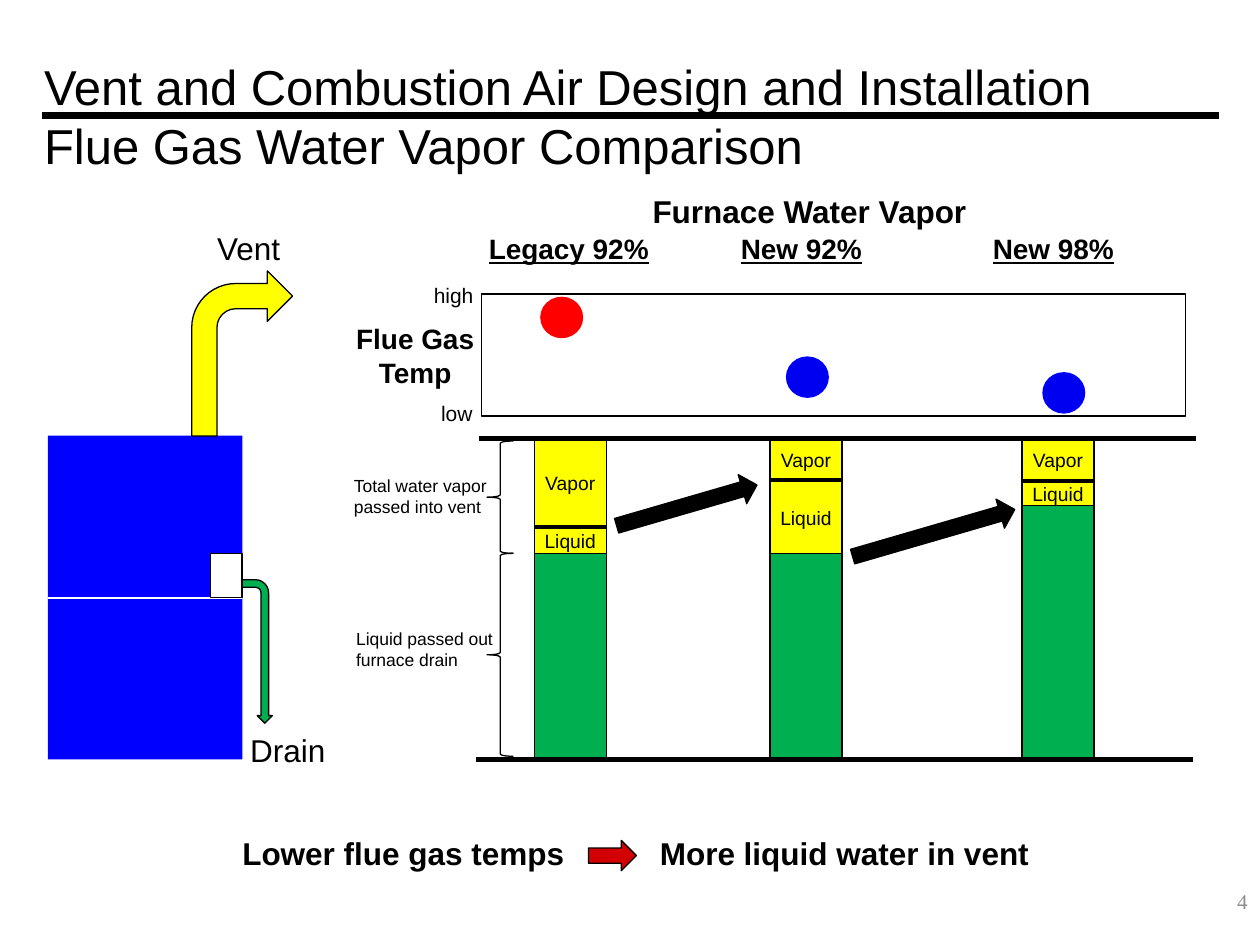
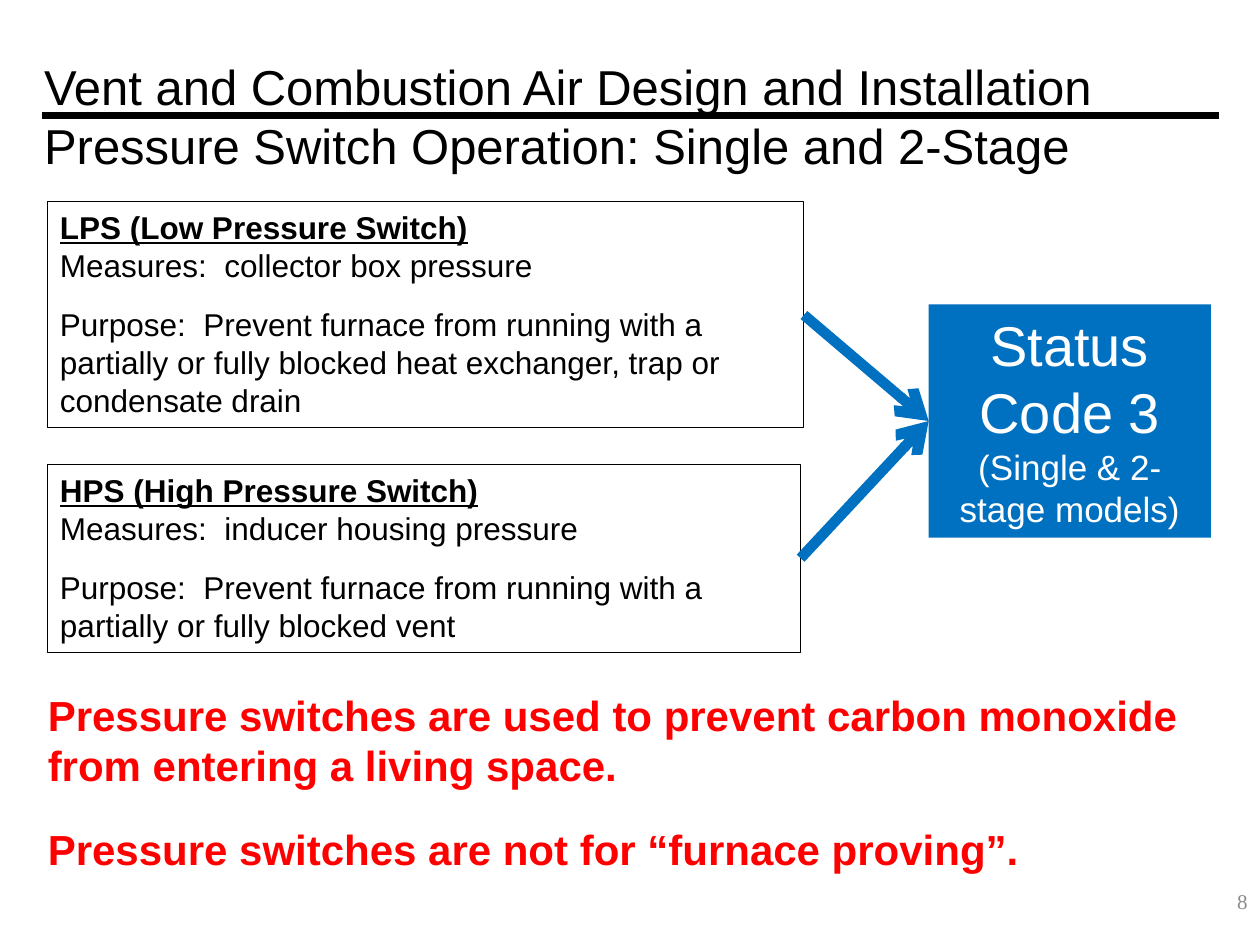
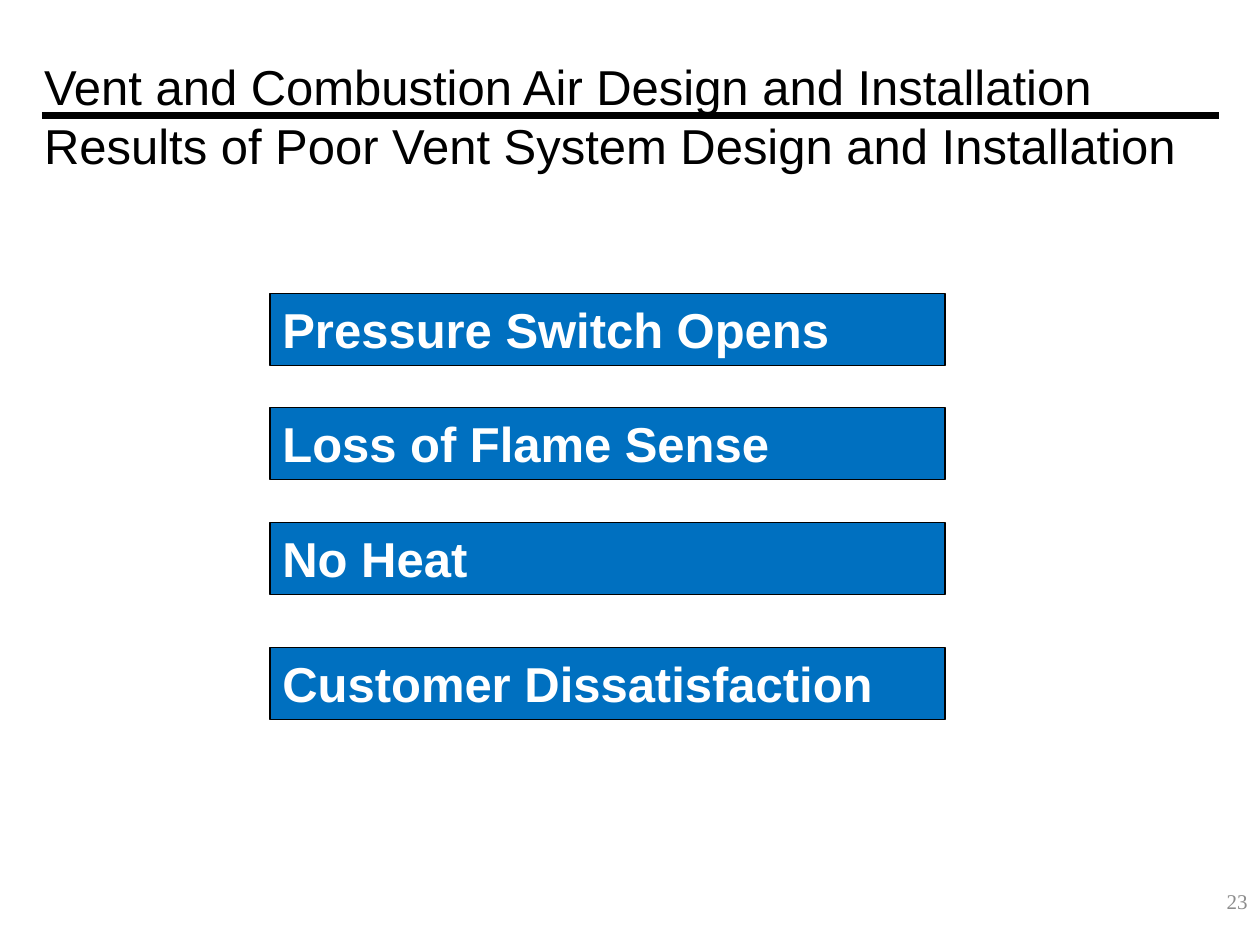
from lxml.etree import SubElement
from pptx import Presentation
from pptx.dml.color import RGBColor
from pptx.enum.shapes import MSO_CONNECTOR as Connector, MSO_SHAPE as Preset
from pptx.enum.text import MSO_ANCHOR as Anchor, MSO_AUTO_SIZE as AutoSize, PP_ALIGN as Align
from pptx.oxml.ns import qn
from pptx.util import Pt

COLORS = {
    "black": "000000",
    "white": "FFFFFF",
    "gray": "8C8C8C",
    "red": "FF0000",
    "dark red": "D20000",
    "yellow": "FFFF00",
    "green": "00B050",
    "blue": "0000FF",
    "dot blue": "0000F0",
    "panel blue": "0070C0",
}
COURSE = "Vent and Combustion Air Design and Installation"


def rgb(name):
    """Return the named colour."""
    return RGBColor.from_string(COLORS[name])


def write(frame, text, size=18, color="black", bold=False, underline=False,
          align=Align.LEFT, font="Arial", before=0, join=False):
    """Write each line of text as a paragraph, or join it to the last one."""
    for line in text.split("\n"):
        paragraph = frame.paragraphs[-1]
        if paragraph.runs and not join:
            paragraph = frame.add_paragraph()
        paragraph.alignment = align
        paragraph.space_before = Pt(before)
        run = paragraph.add_run()
        run.text = line
        run.font.name = font
        run.font.size = Pt(size)
        run.font.bold = bold
        run.font.underline = underline
        run.font.color.rgb = rgb(color)


class Deck:
    """Hold the shared style and the current slide."""

    def __init__(self):
        """Start a 4:3 presentation."""
        self.presentation = Presentation()
        self.presentation.slide_width = Pt(720)
        self.presentation.slide_height = Pt(540)
        self.slide = None

    def add_slide(self, heading, number):
        """Add a slide with its title, rule and number."""
        layout = self.presentation.slide_layouts[5]
        self.slide = self.presentation.slides.add_slide(layout)
        title = self.slide.shapes.title
        title.left, title.top, title.width, title.height = map(Pt, (18, 23.8, 678, 84))
        title.text_frame.auto_size = AutoSize.NONE
        title.text_frame.vertical_anchor = Anchor.MIDDLE
        write(title.text_frame, f"{COURSE}\n{heading}", size=28)
        self.line(24, 66, 696.5, 66, width=4)
        self.text(570, 504, 150, 36, str(number), size=12, color="gray",
                  font="Times New Roman", align=Align.RIGHT)

    def paint(self, shape, fill, line):
        """Set the fill and outline of a shape."""
        if fill:
            shape.fill.solid()
            shape.fill.fore_color.rgb = rgb(fill)
        else:
            shape.fill.background()
        if line:
            shape.line.color.rgb = rgb(line)
            shape.line.width = Pt(0.75)
        else:
            shape.line.fill.background()

    def shape(self, preset, left, top, width, height, fill=None, line="black", rotation=0):
        """Add a preset shape."""
        shape = self.slide.shapes.add_shape(preset, *map(Pt, (left, top, width, height)))
        shape.shadow.inherit = False
        shape.rotation = rotation
        self.paint(shape, fill, line)

    def box(self, left, top, width, height, fill=None, line=None, wrap=True, anchor=Anchor.TOP):
        """Add a text box and return its text frame."""
        shape = self.slide.shapes.add_textbox(*map(Pt, (left, top, width, height)))
        self.paint(shape, fill, line)
        frame = shape.text_frame
        frame.word_wrap = wrap
        frame.vertical_anchor = anchor
        return frame

    def text(self, left, top, width, height, text, wrap=True, anchor=Anchor.TOP, **style):
        """Add a plain text box in one format."""
        write(self.box(left, top, width, height, wrap=wrap, anchor=anchor), text, **style)

    def line(self, x1, y1, x2, y2, color="black", width=0.75, arrow=False):
        """Add a straight line, with an arrowhead if asked."""
        connector = self.slide.shapes.add_connector(
            Connector.STRAIGHT, *map(Pt, (x1, y1, x2, y2)))
        connector.line.color.rgb = rgb(color)
        connector.line.width = Pt(width)
        properties = connector.element.spPr
        if arrow:
            SubElement(properties.find(qn("a:ln")), qn("a:tailEnd"), type="arrow")
        SubElement(properties, qn("a:effectLst"))


def draw_furnace(deck):
    """Draw the furnace with its vent and drain."""
    deck.shape(Preset.RECTANGLE, 27.3, 249, 111.2, 185, "blue", None)
    deck.line(27.3, 341.7, 138.5, 341.7, color="white")
    deck.shape(Preset.BENT_ARROW, 109.6, 154.8, 57.6, 94.3, "yellow")
    deck.shape(Preset.RECTANGLE, 120.2, 316.2, 18.2, 25.2, "white")
    deck.shape(Preset.BENT_ARROW, 106, 363.6, 82, 17.3, "green", rotation=90)
    deck.text(116.6, 127.6, 51, 29, "Vent", wrap=False, align=Align.CENTER)
    deck.text(132.5, 414, 64, 29, "Drain", align=Align.CENTER)


def draw_columns(deck):
    """Draw the water column of each furnace."""
    top, bottom, width = 249.5, 434, 41.2
    label_width, label_height = 56, 20.8
    columns = [(305.3, 301, 316.2), (440, 274.5, 316.2), (584, 275, 288.7)]
    for left, vapor_end, liquid_end in columns:
        deck.shape(Preset.RECTANGLE, left, top, width, liquid_end - top, "yellow")
        deck.shape(Preset.RECTANGLE, left, liquid_end, width, bottom - liquid_end, "green")
        deck.line(left, vapor_end, left + width, vapor_end, width=2.25)
        label_left = left + (width - label_width) / 2
        for label, start, end in (("Vapor", top, vapor_end), ("Liquid", vapor_end, liquid_end)):
            label_top = (start + end - label_height) / 2 + 0.5
            deck.text(label_left, label_top, label_width, label_height, label, wrap=False,
                      anchor=Anchor.MIDDLE, size=11, align=Align.CENTER)
    deck.line(272, bottom, 682, bottom, width=3)
    deck.line(273.6, 250.5, 683.3, 250.5, width=3)
    for left, arrow_top, length in ((383.8, 247, 83.5), (524.9, 256.3, 96.5)):
        deck.shape(Preset.DOWN_ARROW, left, arrow_top, 17.3, length, "black", rotation=253.8)


def draw_temperatures(deck):
    """Draw the flue gas temperature chart with its headings."""
    deck.text(364.6, 106.2, 196, 29, "Furnace Water Vapor", wrap=False,
              bold=True, align=Align.CENTER)
    for index, label in enumerate(("Legacy 92%", "New 92%", "New 98%")):
        deck.text(272.2 + 144 * index, 128.9, 120, 26.6, label, size=16,
                  bold=True, underline=True)
    deck.text(194.4, 180.4, 85.7, 46, "Flue Gas Temp", size=16, bold=True, align=Align.CENTER)
    deck.text(240.5, 157.7, 37.4, 21.6, "high", wrap=False, size=12, align=Align.CENTER)
    deck.text(244.8, 225.4, 32.4, 21.6, "low", wrap=False, size=12, align=Align.CENTER)
    deck.shape(Preset.RECTANGLE, 275, 168, 402.5, 69.8)
    dots = [(309.1, 169.9, "red", "red"), (449.5, 204, "dot blue", "blue"),
            (596, 213, "dot blue", "blue")]
    for left, top, fill, line in dots:
        deck.shape(Preset.OVAL, left, top, 23.8, 23, fill, line)


def build_comparison(deck):
    """Build the water vapor comparison slide."""
    deck.add_slide("Flue Gas Water Vapor Comparison", 4)
    draw_furnace(deck)
    draw_columns(deck)
    draw_temperatures(deck)
    deck.text(196.4, 355.4, 96, 32, "Liquid passed out furnace drain", size=10)
    deck.text(195.1, 267.8, 96, 32, "Total water vapor passed into vent", size=10)
    deck.shape(Preset.LEFT_BRACE, 278.3, 316.2, 15.1, 116)
    deck.shape(Preset.LEFT_BRACE, 278.3, 252, 15.1, 64.2)
    deck.text(131.4, 473, 200, 29, "Lower flue gas temps", bold=True)
    deck.shape(Preset.DOWN_ARROW, 341.3, 475.2, 17.3, 27.4, "dark red", rotation=270)
    deck.text(370, 473, 230, 29, "More liquid water in vent", bold=True)


def build_switches(deck):
    """Build the pressure switch slide."""
    deck.add_slide("Pressure Switch Operation: Single and 2-Stage", 8)
    status = deck.box(530.7, 174, 161.3, 133.2, fill="panel blue")
    write(status, "Status Code 3 ", size=32, color="white", align=Align.CENTER)
    write(status, "(Single & 2-stage models)", size=20, color="white",
          align=Align.CENTER, join=True)
    switches = [
        (115.2, 432, 129, "LPS (Low Pressure Switch)", "collector box pressure",
         "partially or fully blocked heat exchanger, trap or condensate drain"),
        (265.5, 430.3, 107.3, "HPS (High Pressure Switch)", "inducer housing pressure",
         "partially or fully blocked vent"),
    ]
    for top, width, height, name, measure, fault in switches:
        frame = deck.box(27.2, top, width, height, line="black")
        write(frame, name, bold=True, underline=True)
        write(frame, f"Measures:  {measure}")
        write(frame, f"Purpose:  Prevent furnace from running with a {fault}", before=12.4)
    for x, y in ((459.4, 180), (457.5, 319)):
        deck.line(x, y, 530.7, 240.6, color="panel blue", width=6, arrow=True)
    warning = deck.box(20.2, 390.2, 683.3, 113.8)
    write(warning, "Pressure switches are used to prevent carbon monoxide "
          "from entering a living space.", size=24, color="red", bold=True)
    write(warning, "Pressure switches are not for “furnace proving”.",
          size=24, color="red", bold=True, before=19)


def build_results(deck):
    """Build the slide on the results of poor design."""
    deck.add_slide("Results of Poor Vent System Design and Installation", 23)
    results = [(167.6, "Pressure Switch Opens"), (232.7, "Loss of Flame Sense"),
               (298.5, "No Heat"), (370, "Customer Dissatisfaction")]
    for top, result in results:
        frame = deck.box(154.3, top, 385.7, 41.2, fill="panel blue", line="black")
        write(frame, result, size=28, color="white", bold=True)


def main():
    """Build and save the presentation."""
    deck = Deck()
    build_comparison(deck)
    build_switches(deck)
    build_results(deck)
    deck.presentation.save("out.pptx")


if __name__ == "__main__":
    main()
